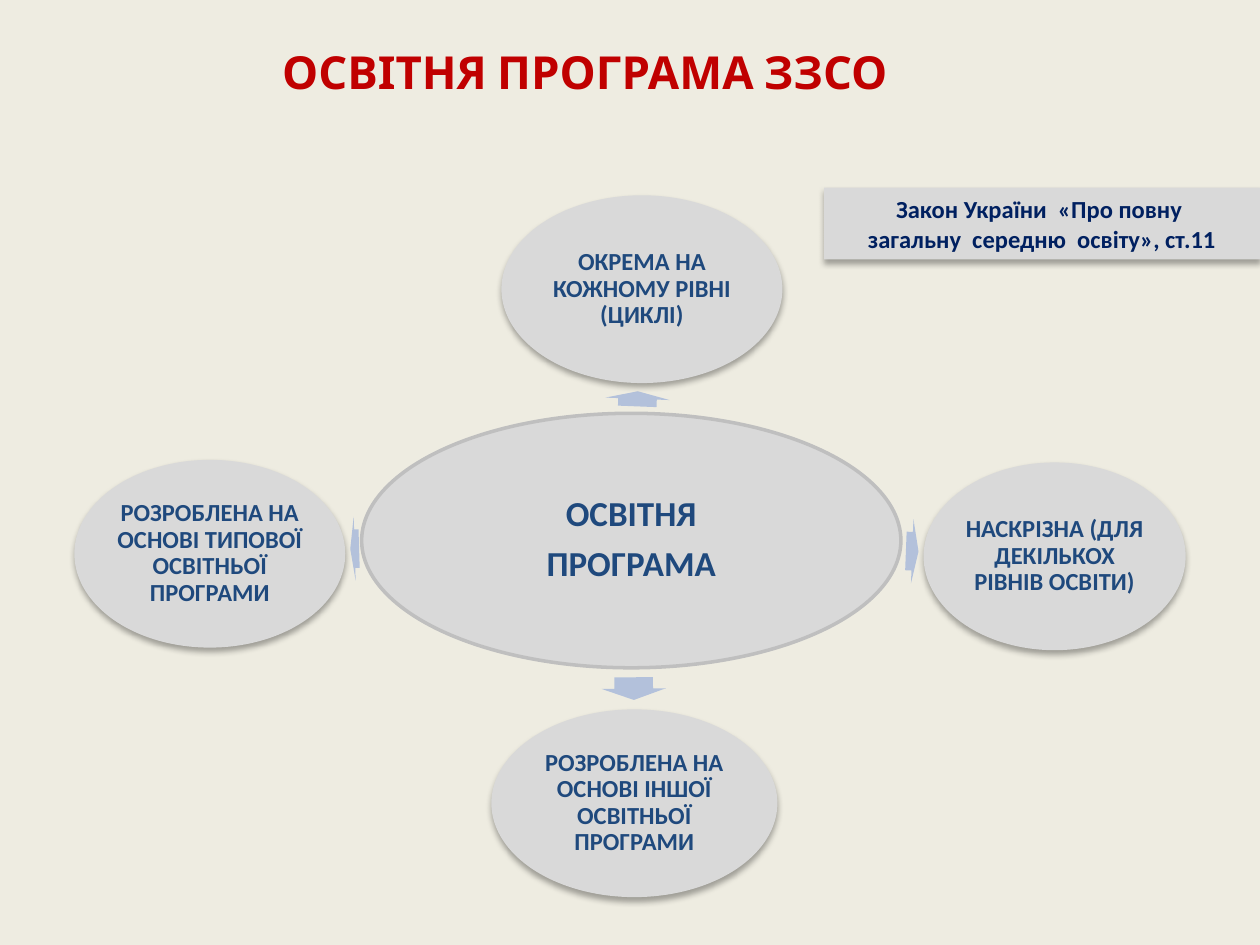
"""Build a slide with a hub ellipse, four surrounding ellipses and a law reference."""
import pptx
import pptx.util
import pptx.dml.color
import pptx.enum.shapes
import pptx.enum.text
import pptx.oxml

BACKGROUND = pptx.dml.color.RGBColor(0xEE, 0xEC, 0xE1)
GREY = pptx.dml.color.RGBColor(0xD9, 0xD9, 0xD9)
OUTLINE = pptx.dml.color.RGBColor(0xBF, 0xBF, 0xBF)
ARROW = pptx.dml.color.RGBColor(0xB3, 0xC1, 0xDB)
BLUE = pptx.dml.color.RGBColor(0x1F, 0x49, 0x7D)
NAVY = pptx.dml.color.RGBColor(0x00, 0x20, 0x60)
RED = pptx.dml.color.RGBColor(0xC0, 0x00, 0x00)
SHADOW = (
    '<a:effectLst xmlns:a="http://schemas.openxmlformats.org/drawingml/2006/main">'
    '<a:outerShdw blurRad="44450" dist="27940" dir="5400000" rotWithShape="0">'
    '<a:srgbClr val="000000"><a:alpha val="32000"/></a:srgbClr>'
    '</a:outerShdw></a:effectLst>'
)
KIND = pptx.enum.shapes.MSO_SHAPE
MIDDLE = pptx.enum.text.MSO_ANCHOR.MIDDLE

presentation = pptx.Presentation()
presentation.slide_width = pptx.util.Inches(10)
presentation.slide_height = pptx.util.Inches(7.5)
column = presentation.slide_width / 100
row = presentation.slide_height / 75
slide = presentation.slides.add_slide(presentation.slide_layouts[6])
slide.background.fill.solid()
slide.background.fill.fore_color.rgb = BACKGROUND


def add_shape(kind, left, top, width, height, color, shadowed=False):
    shape = slide.shapes.add_shape(
        kind, round(left * column), round(top * row), round(width * column), round(height * row))
    shape.fill.solid()
    shape.fill.fore_color.rgb = color
    shape.line.fill.background()
    shape.shadow.inherit = False
    if shadowed:
        properties = shape.fill._xPr
        properties.remove(properties.effectLst)
        properties.append(pptx.oxml.parse_xml(SHADOW))
    return shape


def write(shape, lines, size, color, font="Calibri", inset=None, anchor=MIDDLE):
    frame = shape.text_frame
    frame.word_wrap = True
    frame.vertical_anchor = anchor
    if inset is not None:
        frame.margin_left = frame.margin_right = pptx.util.Inches(inset)
        frame.margin_top = frame.margin_bottom = pptx.util.Inches(inset)
    for index, line in enumerate(lines):
        paragraph = frame.add_paragraph() if index else frame.paragraphs[0]
        paragraph.alignment = pptx.enum.text.PP_ALIGN.CENTER
        if inset is not None:
            paragraph.line_spacing = 0.9
            paragraph.space_after = pptx.util.Pt(size * 0.35)
        run = paragraph.add_run()
        run.text = line
        run.font.name = font
        run.font.size = pptx.util.Pt(size)
        run.font.bold = True
        run.font.color.rgb = color


title = slide.shapes.add_textbox(
    round(20.1 * column), round(3 * row), round(53.5 * column), round(6.9 * row))
write(title, ["ОСВІТНЯ ПРОГРАМА ЗЗСО "], 26, RED, "Cabin", anchor=pptx.enum.text.MSO_ANCHOR.TOP)

hub = add_shape(KIND.OVAL, 28.7, 32.8, 42.8, 20.2, GREY)
hub.line.color.rgb = OUTLINE
hub.line.width = pptx.util.Pt(2)
write(hub, ["ОСВІТНЯ", "ПРОГРАМА"], 20, BLUE, inset=0.03)

branches = [
    ("ОКРЕМА НА КОЖНОМУ РІВНІ (ЦИКЛІ)", 39.8, 15.5, 22.3, 50, 29.1, 1.2, 272.2),
    ("НАСКРІЗНА (ДЛЯ ДЕКІЛЬКОХ РІВНІВ ОСВІТИ)", 73.3, 36.7, 20.8, 71.9, 41.2, 1, 2.2),
    ("РОЗРОБЛЕНА НА ОСНОВІ ІНШОЇ ОСВІТНЬОЇ ПРОГРАМИ", 39, 56.3, 22.7, 49.4, 52.1, 1.8, 89.4),
    ("РОЗРОБЛЕНА НА ОСНОВІ ТИПОВОЇ ОСВІТНЬОЇ ПРОГРАМИ", 5.9, 36.5, 21.5, 27.8, 41, 0.7, 178.2),
]
for text, left, top, width, arrow_left, arrow_top, arrow_width, rotation in branches:
    arrow = add_shape(KIND.RIGHT_ARROW, arrow_left, arrow_top, arrow_width, 5.1, ARROW)
    arrow.adjustments[0] = 0.6
    arrow.adjustments[1] = 0.5
    arrow.rotation = rotation
    ellipse = add_shape(KIND.OVAL, left, top, width, 14.9, GREY, shadowed=True)
    write(ellipse, [text], 14, BLUE, inset=0.02)

law = add_shape(KIND.RECTANGLE, 65.4, 14.9, 34.6, 5.7, GREY, shadowed=True)
write(law, ["Закон України  «Про повну ", "загальну  середню  освіту», ст.11"], 14, NAVY)

presentation.save("out.pptx")
